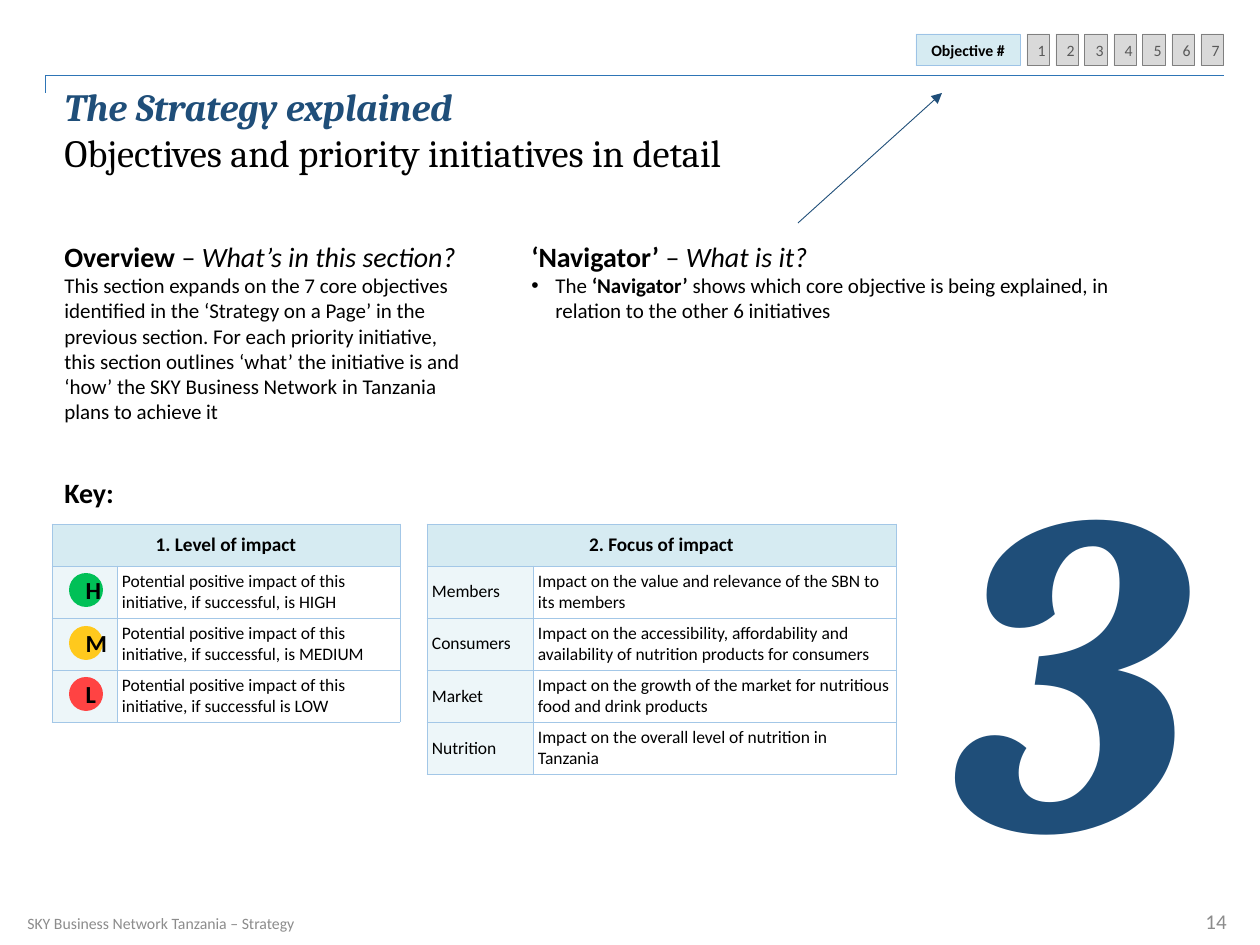
from lxml import etree
from pptx import Presentation
from pptx.dml.color import RGBColor
from pptx.enum.shapes import MSO_CONNECTOR, MSO_SHAPE
from pptx.enum.text import MSO_ANCHOR, PP_ALIGN
from pptx.oxml.ns import qn
from pptx.util import Emu, Pt

TOP, MID = MSO_ANCHOR.TOP, MSO_ANCHOR.MIDDLE
LEFT, CENTER, RIGHT = PP_ALIGN.LEFT, PP_ALIGN.CENTER, PP_ALIGN.RIGHT
RECT, OVAL = MSO_SHAPE.RECTANGLE, MSO_SHAPE.OVAL
STRAIGHT, ELBOW = MSO_CONNECTOR.STRAIGHT, MSO_CONNECTOR.ELBOW

BLACK = RGBColor(0x00, 0x00, 0x00)
WHITE = RGBColor(0xFF, 0xFF, 0xFF)
NAVY = RGBColor(0x1F, 0x4E, 0x79)
BLUE = RGBColor(0x2E, 0x75, 0xB6)
SKY = RGBColor(0x9D, 0xC3, 0xE6)
EDGE = RGBColor(0xA3, 0xC7, 0xE7)
HEAD = RGBColor(0xD6, 0xEB, 0xF2)
PALE = RGBColor(0xED, 0xF6, 0xF9)
GREEN = RGBColor(0x00, 0xC0, 0x57)
AMBER = RGBColor(0xFF, 0xC9, 0x1D)
RED = RGBColor(0xFF, 0x43, 0x43)
MUTED = RGBColor(0x8C, 0x8C, 0x8C)
DARK = RGBColor(0x59, 0x59, 0x59)
GREY = RGBColor(0x80, 0x80, 0x80)
LIGHT = RGBColor(0xD9, 0xD9, 0xD9)

PLAIN = {}
BOLD = {"bold": True}
SLANT = {"italic": True}
BOTH = {"bold": True, "italic": True}


def px(*vals):
    return [Emu(round(v * 914400 / 126)) for v in vals]


def write(frame, paras, align=LEFT, font="Calibri"):
    """Fill a frame; each paragraph is a list of (text, size, colour, format)."""
    frame.word_wrap = True
    for i, runs in enumerate(paras):
        para = frame.add_paragraph() if i else frame.paragraphs[0]
        para.alignment = align
        for text, size, color, form in runs:
            run = para.add_run()
            run.text = text
            run.font.color.rgb = color
            base = {"name": font, "size": Pt(size), "bold": False, "italic": False}
            for key, val in {**base, **form}.items():
                setattr(run.font, key, val)


prs = Presentation()
prs.slide_width, prs.slide_height = px(1260, 945)
slide = prs.slides.add_slide(prs.slide_layouts[6])
shapes = slide.shapes

# Text boxes: place, anchor, alignment, font, paragraphs
boxes = [
    ((15, 898, 426, 50), MID, LEFT, "Calibri",
     [[("SKY Business Network Tanzania – Strategy", 9, MUTED, PLAIN)]]),
    ((955, 896, 284, 50), MID, RIGHT, "Calibri", [[("14", 12, MUTED, PLAIN)]]),
    ((52, 77, 1179, 111), TOP, LEFT, "Cambria",
     [[("The Strategy explained", 22, NAVY, BOTH)],
      [("Objectives and priority initiatives in detail", 22, BLACK, PLAIN)]]),
    ((942, 367, 314, 265), TOP, LEFT, "Cambria", [[("3", 262, NAVY, BOTH)]]),
    ((52, 233, 427, 112), TOP, LEFT, "Calibri",
     [[("Overview ", 16, BLACK, BOLD), ("– ", 16, BLACK, PLAIN),
       ("What’s in this section?", 16, BLACK, SLANT)],
      [("This section expands on the 7 core objectives identified in the "
        "‘Strategy on a Page’ in the previous section. For each priority "
        "initiative, this section outlines ‘what’ the initiative is and ‘how’ "
        "the SKY Business Network in Tanzania plans to achieve it",
        12, BLACK, PLAIN)]]),
    ((52, 469, 427, 44), TOP, LEFT, "Calibri", [[("Key:", 16, BLACK, BOLD)]]),
    ((519, 233, 606, 160), TOP, LEFT, "Calibri",
     [[("‘Navigator’ ", 16, BLACK, BOLD), ("– ", 16, BLACK, PLAIN),
       ("What is it?", 16, BLACK, SLANT)],
      [("The ", 12, BLACK, PLAIN), ("‘Navigator’", 12, BLACK, BOLD),
       (" shows which core objective is being explained, in relation to the "
        "other 6 initiatives", 12, BLACK, PLAIN)]]),
]
for place, anchor, align, font, paras in boxes:
    frame = shapes.add_textbox(*px(*place)).text_frame
    frame.vertical_anchor = anchor
    write(frame, paras, align, font)

# Bullet on the navigator paragraph, the last one written
props = frame.paragraphs[1]._p.get_or_add_pPr()
indent = px(24)[0]
props.set("marL", str(indent))
props.set("indent", str(-indent))
etree.SubElement(props, qn("a:buFont")).set("typeface", "Arial")
etree.SubElement(props, qn("a:buChar")).set("char", "•")

# Key tables: left edge, column widths, heading, rows
impact = "Potential positive impact of this initiative, if successful"
tables = [
    (52, (65, 283), "1. Level of impact",
     [("", impact + ", is HIGH"), ("", impact + ", is MEDIUM"),
      ("", impact + " is LOW")]),
    (427, (106, 363), "2. Focus of impact",
     [("Members", "Impact on the value and relevance of the SBN to its members"),
      ("Consumers", "Impact on the accessibility, affordability and availability "
                    "of nutrition products for consumers"),
      ("Market", "Impact on the growth of the market for nutritious food and "
                 "drink products"),
      ("Nutrition", "Impact on the overall level of nutrition in Tanzania")]),
]
for left, widths, title, rows in tables:
    high = 42 + 52 * len(rows)
    place = px(left, 524, sum(widths), high)
    table = shapes.add_table(len(rows) + 1, 2, *place).table
    table.horz_banding = False
    for col, width in zip(table.columns, px(*widths)):
        col.width = width
    for r, texts in enumerate([(title, "")] + rows):
        table.rows[r].height = px(52 if r else 42)[0]
        for c, text in enumerate(texts):
            cell = table.cell(r, c)
            cell.vertical_anchor = TOP if r and c else MID
            for side in ("lnL", "lnR", "lnT", "lnB"):
                line = etree.SubElement(cell._tc.get_or_add_tcPr(), qn("a:" + side))
                line.set("w", str(Pt(0.5)))
                fill = etree.SubElement(line, qn("a:solidFill"))
                etree.SubElement(fill, qn("a:srgbClr")).set("val", str(EDGE))
            cell.fill.solid()
            cell.fill.fore_color.rgb = (WHITE if c else PALE) if r else HEAD
            if r and text:
                for side in ("left", "right", "top", "bottom"):
                    setattr(cell, "margin_" + side, px(5)[0])
            if text:
                size, form = (10, PLAIN) if r else (11, BOLD)
                write(cell.text_frame, [[(text, size, BLACK, form)]],
                      LEFT if r else CENTER)
    table.cell(0, 0).merge(table.cell(0, 1))

# Impact dots and navigator tabs: kind, place, fill, line, text, size, colour, format
marks = [(OVAL, (69, y, 34, 34), fill, None, text, 14, BLACK, BOLD)
         for y, fill, text in ((573, GREEN, "H"), (626, AMBER, "M"), (677, RED, "L"))]
marks.append((RECT, (916, 34, 104, 32), HEAD, SKY, "Objective #", 9, BLACK, BOLD))
marks += [(RECT, (1027 + 29 * i, 34, 23, 32), LIGHT, GREY, str(i + 1), 9, DARK, PLAIN)
          for i in range(7)]
for kind, place, fill, edge, text, size, color, form in marks:
    mark = shapes.add_shape(kind, *px(*place))
    mark.shadow.inherit = False
    mark.fill.solid()
    mark.fill.fore_color.rgb = fill
    if edge:
        mark.line.color.rgb = edge
        mark.line.width = Pt(0.5)
    else:
        mark.line.fill.background()
    mark.text_frame.vertical_anchor = MID
    write(mark.text_frame, [[(text, size, color, form)]], CENTER)

# Header rule and pointer to the navigator
for kind, ends, color in ((ELBOW, (45, 93, 1224, 75), BLUE),
                          (STRAIGHT, (798, 223, 942, 93), NAVY)):
    link = shapes.add_connector(kind, *px(*ends))
    link.line.color.rgb = color
    link.line.width = Pt(0.5)
    etree.SubElement(link._element.spPr, qn("a:effectLst"))
    if kind == ELBOW:
        geom = link._element.spPr.find(qn("a:prstGeom"))
        guide = etree.SubElement(geom.find(qn("a:avLst")), qn("a:gd"))
        guide.set("name", "adj1")
        guide.set("fmla", "val 0")
    else:
        tip = etree.SubElement(link.line._get_or_add_ln(), qn("a:tailEnd"))
        tip.set("type", "triangle")

prs.save("out.pptx")
